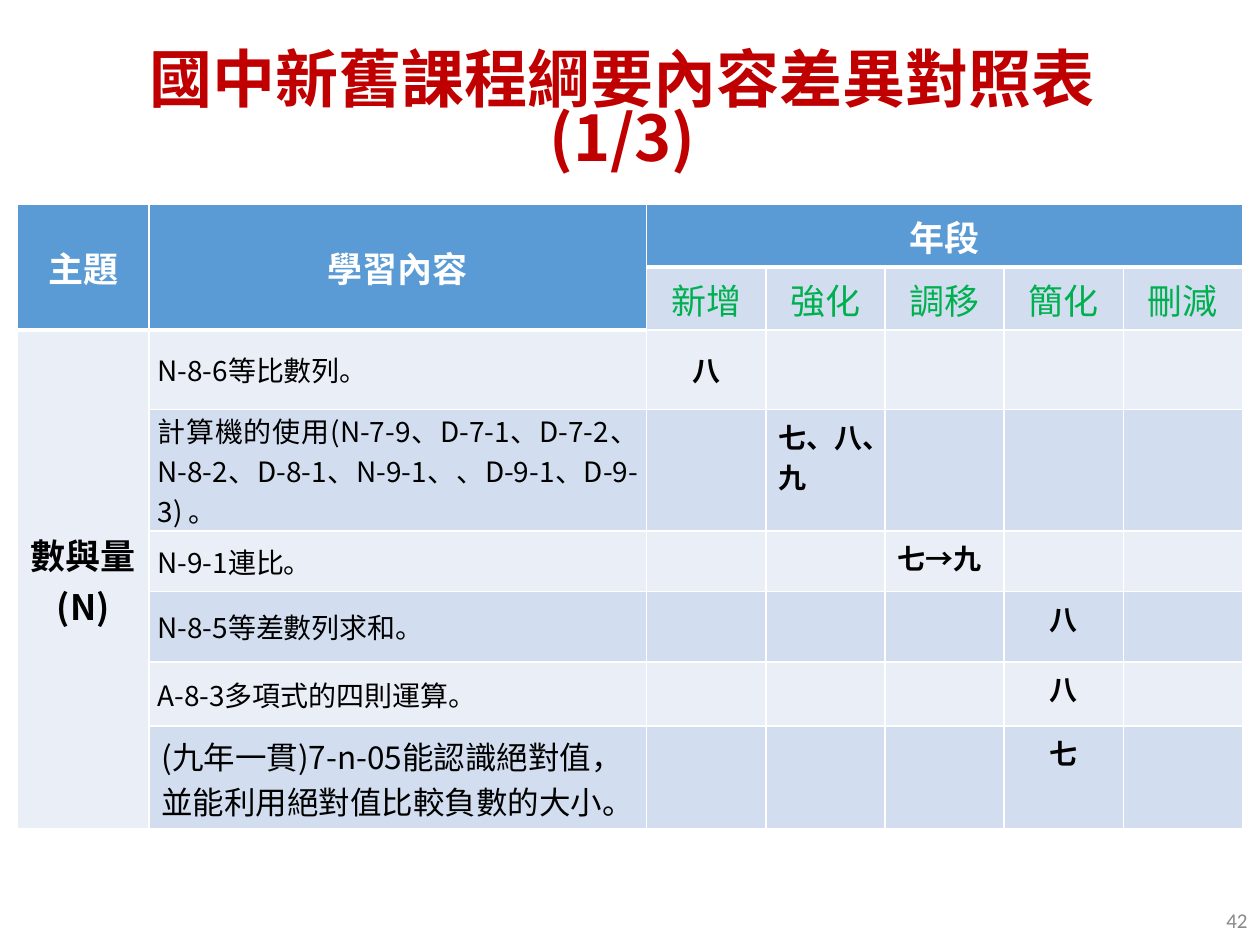
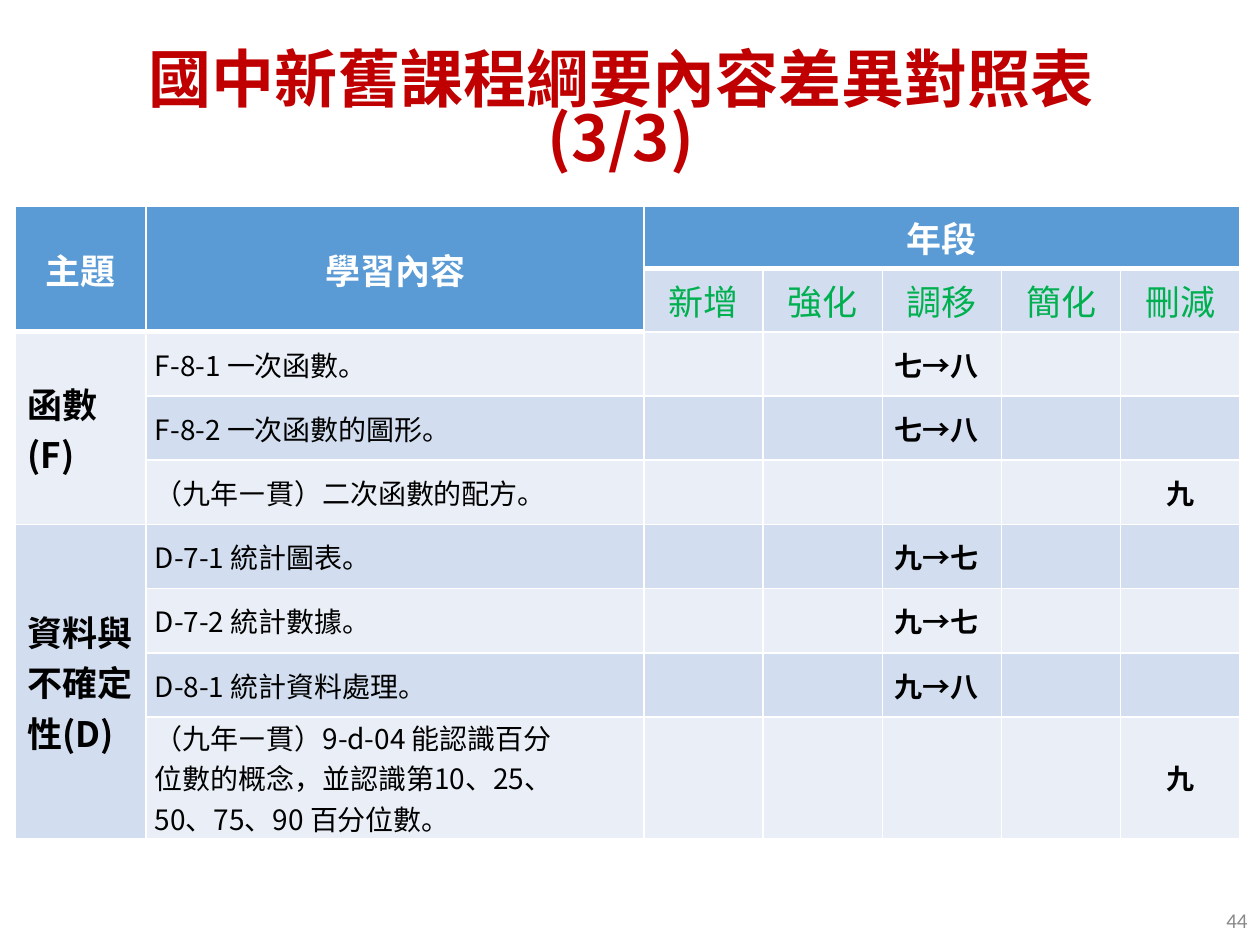
from dataclasses import dataclass

from lxml.etree import SubElement
from pptx import Presentation
from pptx.dml.color import RGBColor
from pptx.enum.text import MSO_ANCHOR as Anchor, MSO_AUTO_SIZE as AutoSize, PP_ALIGN as Align
from pptx.oxml.ns import qn
from pptx.util import Pt


@dataclass(frozen=True)
class Theme:
    font: str = "Noto Sans CJK SC"
    number_font: str = "Calibri"
    title: str = "C00000"
    header: str = "5B9BD5"
    change: str = "00B050"
    text: str = "000000"
    white: str = "FFFFFF"
    number: str = "898989"
    bands: tuple = ("EAEFF7", "D2DEEF")
    title_size: float = 36
    header_size: float = 20
    large_size: float = 18
    body_size: float = 16
    number_size: float = 12


THEME = Theme()
TITLE = "國中新舊課程綱要內容差異對照表"
CHANGES = ["新增", "強化", "調移", "簡化", "刪減"]
COLUMN_WIDTHS = [75, 284.5] + [68.1] * len(CHANGES)
HEADER_HEIGHT = 36
CELL_INSETS = (7.2, 3.6, 7.2, 3.6)
CONTENT_INSETS = (5, 0, 5, 0)

SLIDES = [
    {
        "part": "(1/3)", "number": "42", "left": 10.1, "top": 116.6, "title_left": 36.7,
        "topic_align": Align.CENTER,
        "topics": [
            ("數與量(N)", [
                ("N-8-6等比數列。", "新增", "八", 45.4, Anchor.MIDDLE),
                ("計算機的使用(N-7-9、D-7-1、D-7-2、N-8-2、D-8-1、N-9-1、、D-9-1、D-9-3) 。",
                 "強化", "七、八、九", 69.5, Anchor.TOP),
                ("N-9-1連比。", "調移", "七→九", 34.6, Anchor.TOP),
                ("N-8-5等差數列求和。", "簡化", "八", 40.3, Anchor.TOP),
                ("A-8-3多項式的四則運算。", "簡化", "八", 36.7, Anchor.TOP),
                ("(九年一貫)7-n-05能認識絕對值，並能利用絕對值比較負數的大小。",
                 "簡化", "七", 58.5, Anchor.TOP),
            ]),
        ],
        "large_content": "(九年一貫)",
    },
    {
        "part": "(3/3)", "number": "44", "left": 8.6, "top": 117.6, "title_left": 35.7,
        "topic_align": Align.LEFT,
        "topics": [
            ("函數(F)", [
                ("F-8-1 一次函數。", "調移", "七→八", 36.7, Anchor.MIDDLE),
                ("F-8-2 一次函數的圖形。", "調移", "七→八", 36.7, Anchor.MIDDLE),
                ("（九年㇐貫）二次函數的配方。", "刪減", "九", 36.7, Anchor.MIDDLE),
            ]),
            ("資料與不確定性(D)", [
                ("D-7-1 統計圖表。", "調移", "九→七", 36.7, Anchor.MIDDLE),
                ("D-7-2 統計數據。", "調移", "九→七", 36.7, Anchor.MIDDLE),
                ("D-8-1 統計資料處理。", "調移", "九→八", 36.7, Anchor.MIDDLE),
                ("（九年㇐貫）9-d-04 能認識百分\n位數的概念，並認識第10、25、\n50、75、90 百分位數。",
                 "刪減", "九", 69.5, Anchor.MIDDLE),
            ]),
        ],
        "large_content": None,
    },
]


def write(text_frame, text, size, color, bold=False, align=Align.CENTER, font=THEME.font):
    text_frame.text = text
    for paragraph in text_frame.paragraphs:
        paragraph.alignment = align
        for run in paragraph.runs:
            run.font.name = font
            run.font.size = Pt(size)
            run.font.bold = bold
            run.font.color.rgb = RGBColor.from_string(color)
            SubElement(run._r.get_or_add_rPr(), qn("a:ea"), typeface=font)


def set_insets(target, insets):
    for side, inset in zip(("left", "top", "right", "bottom"), insets):
        setattr(target, f"margin_{side}", Pt(inset))


def write_cell(cell, text, size, color, bold=False, align=Align.CENTER,
               anchor=Anchor.MIDDLE, insets=CELL_INSETS):
    write(cell.text_frame, text, size, color, bold, align)
    cell.vertical_anchor = anchor
    set_insets(cell, insets)


def paint_cell(cell, color, bottom_width):
    properties = cell._tc.get_or_add_tcPr()
    for side, width in (("L", 1), ("R", 1), ("T", 1), ("B", bottom_width)):
        line = SubElement(properties, qn(f"a:ln{side}"), w=str(Pt(width)))
        fill = SubElement(line, qn("a:solidFill"))
        SubElement(fill, qn("a:srgbClr"), val=THEME.white)
    cell.fill.solid()
    cell.fill.fore_color.rgb = RGBColor.from_string(color)


def add_title(slide, content):
    title = slide.shapes.title
    title.left, title.top = Pt(content["title_left"]), Pt(33)
    title.width, title.height = Pt(646), Pt(65)
    frame = title.text_frame
    write(frame, TITLE + content["part"], THEME.title_size, THEME.title, bold=True)
    frame.auto_size = AutoSize.NONE
    frame.word_wrap = True
    frame.vertical_anchor = Anchor.MIDDLE
    set_insets(frame, (22, 3.6, 30, 3.6))
    frame.paragraphs[0].line_spacing = 0.78


def add_page_number(slide, number):
    frame = slide.shapes.add_textbox(Pt(558), Pt(511.2), Pt(162), Pt(28.8)).text_frame
    frame.word_wrap = True
    frame.vertical_anchor = Anchor.MIDDLE
    write(frame, number, THEME.number_size, THEME.number,
          align=Align.RIGHT, font=THEME.number_font)


def write_header(table):
    for column, text in enumerate(("主題", "學習內容")):
        table.cell(0, column).merge(table.cell(1, column))
        write_cell(table.cell(0, column), text, THEME.header_size, THEME.white, bold=True)
    table.cell(0, 2).merge(table.cell(0, len(COLUMN_WIDTHS) - 1))
    write_cell(table.cell(0, 2), "年段", THEME.header_size, THEME.white,
               bold=True, anchor=Anchor.TOP)
    for column, change in enumerate(CHANGES, 2):
        write_cell(table.cell(1, column), change, THEME.header_size, THEME.change,
                   anchor=Anchor.TOP)


def write_item(table, row, item, large_content):
    content, change, grade, height, anchor = item
    if large_content and content.startswith(large_content):
        write_cell(table.cell(row, 1), content, THEME.large_size, THEME.text,
                   align=Align.LEFT, anchor=Anchor.TOP)
    else:
        write_cell(table.cell(row, 1), content, THEME.body_size, THEME.text,
                   align=Align.JUSTIFY, insets=CONTENT_INSETS)
    write_cell(table.cell(row, 2 + CHANGES.index(change)), grade, THEME.body_size,
               THEME.text, bold=True, anchor=anchor,
               align=Align.CENTER if len(grade) == 1 else Align.LEFT)


def add_comparison(slide, content):
    items = [item for topic, entries in content["topics"] for item in entries]
    heights = [HEADER_HEIGHT] * 2 + [item[3] for item in items]
    table = slide.shapes.add_table(
        len(heights), len(COLUMN_WIDTHS), Pt(content["left"]), Pt(content["top"]),
        Pt(sum(COLUMN_WIDTHS)), Pt(sum(heights))).table
    table.first_row = table.horz_banding = False
    for column, width in zip(table.columns, COLUMN_WIDTHS):
        column.width = Pt(width)
    for row, height in zip(table.rows, heights):
        row.height = Pt(height)
    for row in range(len(heights)):
        for column in range(len(COLUMN_WIDTHS)):
            is_header = row == 0 or (row == 1 and column < 2)
            color = THEME.header if is_header else THEME.bands[row % 2]
            paint_cell(table.cell(row, column), color, 3 if is_header else 1)

    write_header(table)
    row = 2
    for topic, entries in content["topics"]:
        table.cell(row, 0).merge(table.cell(row + len(entries) - 1, 0))
        write_cell(table.cell(row, 0), topic, THEME.header_size, THEME.text,
                   bold=True, align=content["topic_align"])
        for item in entries:
            write_item(table, row, item, content["large_content"])
            row += 1


def main():
    presentation = Presentation()
    presentation.slide_width, presentation.slide_height = Pt(720), Pt(540)
    for content in SLIDES:
        slide = presentation.slides.add_slide(presentation.slide_layouts[5])
        add_page_number(slide, content["number"])
        add_title(slide, content)
        add_comparison(slide, content)
    presentation.save("out.pptx")


if __name__ == "__main__":
    main()
